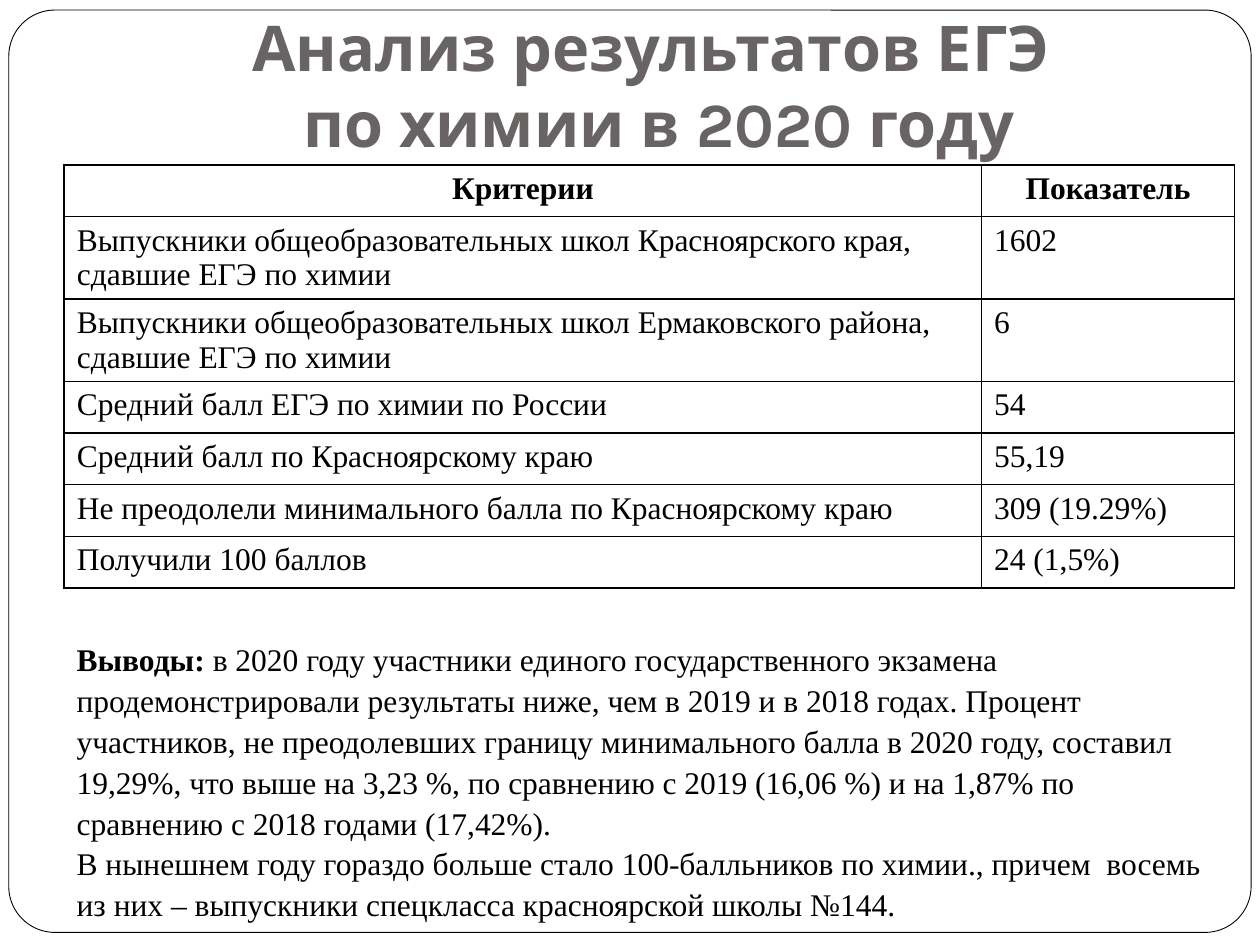
import pptx
import pptx.util
import pptx.dml.color
import pptx.enum.shapes
import pptx.enum.text
import pptx.oxml
import pptx.oxml.ns
import lxml.etree

Inches = pptx.util.Inches
Pt = pptx.util.Pt
Align = pptx.enum.text.PP_ALIGN
BLACK = pptx.dml.color.RGBColor(0x00, 0x00, 0x00)
WHITE = pptx.dml.color.RGBColor(0xFF, 0xFF, 0xFF)
GRAY = pptx.dml.color.RGBColor(0x69, 0x64, 0x64)


def write(para, text, font="Times New Roman", size=18, color=BLACK,
          bold=False, align=Align.LEFT, space=1.0):
    para.alignment = align
    para.line_spacing = space
    for num, line in enumerate(text.split("\n")):
        if num:
            para.add_line_break()
        run = para.add_run()
        run.text = line
        run.font.name = font
        run.font.size = Pt(size)
        run.font.bold = bold
        run.font.color.rgb = color


def border(cell):
    props = cell._tc.get_or_add_tcPr()
    for num, side in enumerate(("a:lnL", "a:lnR", "a:lnT", "a:lnB")):
        line = lxml.etree.Element(pptx.oxml.ns.qn(side), w=str(Pt(1)))
        fill = lxml.etree.SubElement(line, pptx.oxml.ns.qn("a:solidFill"))
        lxml.etree.SubElement(fill, pptx.oxml.ns.qn("a:srgbClr"), val=str(BLACK))
        props.insert(num, line)


deck = pptx.Presentation()
deck.slide_width = Inches(10)
deck.slide_height = Inches(7.5)
slide = deck.slides.add_slide(deck.slide_layouts[5])

title = slide.shapes.title
title.left, title.top = Inches(0.98), Inches(0.68)
title.width, title.height = Inches(8.5), Inches(0.69)
frame = title.text_frame
frame.auto_size = pptx.enum.text.MSO_AUTO_SIZE.NONE
frame.vertical_anchor = pptx.enum.text.MSO_ANCHOR.BOTTOM
frame.margin_bottom = Inches(0.1)
write(frame.paragraphs[0], "Анализ результатов ЕГЭ \nпо химии в 2020 году",
      font="Karla", size=36, color=GRAY, bold=True, align=Align.CENTER)

panel = slide.shapes.add_shape(
    pptx.enum.shapes.MSO_SHAPE.ROUNDED_RECTANGLE,
    Inches(0.07), Inches(0.08), Inches(9.86), Inches(7.32))
panel.adjustments[0] = 0.05
panel.shadow.inherit = False
panel.fill.solid()
panel.fill.fore_color.rgb = WHITE
panel.line.color.rgb = BLACK
panel.line.width = Pt(0.5)
title.element.addprevious(panel.element)

rows = [
    ("Критерии", "Показатель"),
    ("Выпускники общеобразовательных школ Красноярского края, сдавшие ЕГЭ по химии", "1602"),
    ("Выпускники общеобразовательных школ Ермаковского района, сдавшие ЕГЭ по химии", "6"),
    ("Средний балл ЕГЭ по химии по России", "54"),
    ("Средний балл по Красноярскому краю", "55,19"),
    ("Не преодолели минимального балла по Красноярскому краю", "309 (19.29%)"),
    ("Получили 100 баллов", "24 (1,5%)"),
]
table = slide.shapes.add_table(
    len(rows), 2, Inches(0.51), Inches(1.31), Inches(9.29), Inches(3.35)).table
table.columns[0].width = Inches(7.28)
table.columns[1].width = Inches(2.01)
for r, row in enumerate(rows):
    table.rows[r].height = Inches(0.65 if r in (1, 2) else 0.41)
    for c, text in enumerate(row):
        cell = table.cell(r, c)
        cell.fill.solid()
        cell.fill.fore_color.rgb = WHITE
        border(cell)
        write(cell.text_frame.paragraphs[0], text, bold=r == 0,
              align=Align.LEFT if r else Align.CENTER)

notes = slide.shapes.add_textbox(Inches(0.51), Inches(5.01), Inches(9.29), Inches(2.52))
body = notes.text_frame
body.word_wrap = True
first = body.paragraphs[0]
write(first, "Выводы: ", bold=True, space=1.08)
write(first, "в 2020 году участники единого государственного экзамена "
      "продемонстрировали результаты ниже, чем в 2019 и в 2018 годах. "
      "Процент участников, не преодолевших границу минимального балла "
      "в 2020 году, составил 19,29%, что выше на 3,23 %, по сравнению "
      "с 2019 (16,06 %) и на 1,87% по сравнению с 2018 годами (17,42%).",
      space=1.08)
write(body.add_paragraph(), "В нынешнем году гораздо больше стало 100-балльников "
      "по химии., причем  восемь из них – выпускники спецкласса "
      "красноярской школы №144.", space=1.08)

deck.save("out.pptx")
